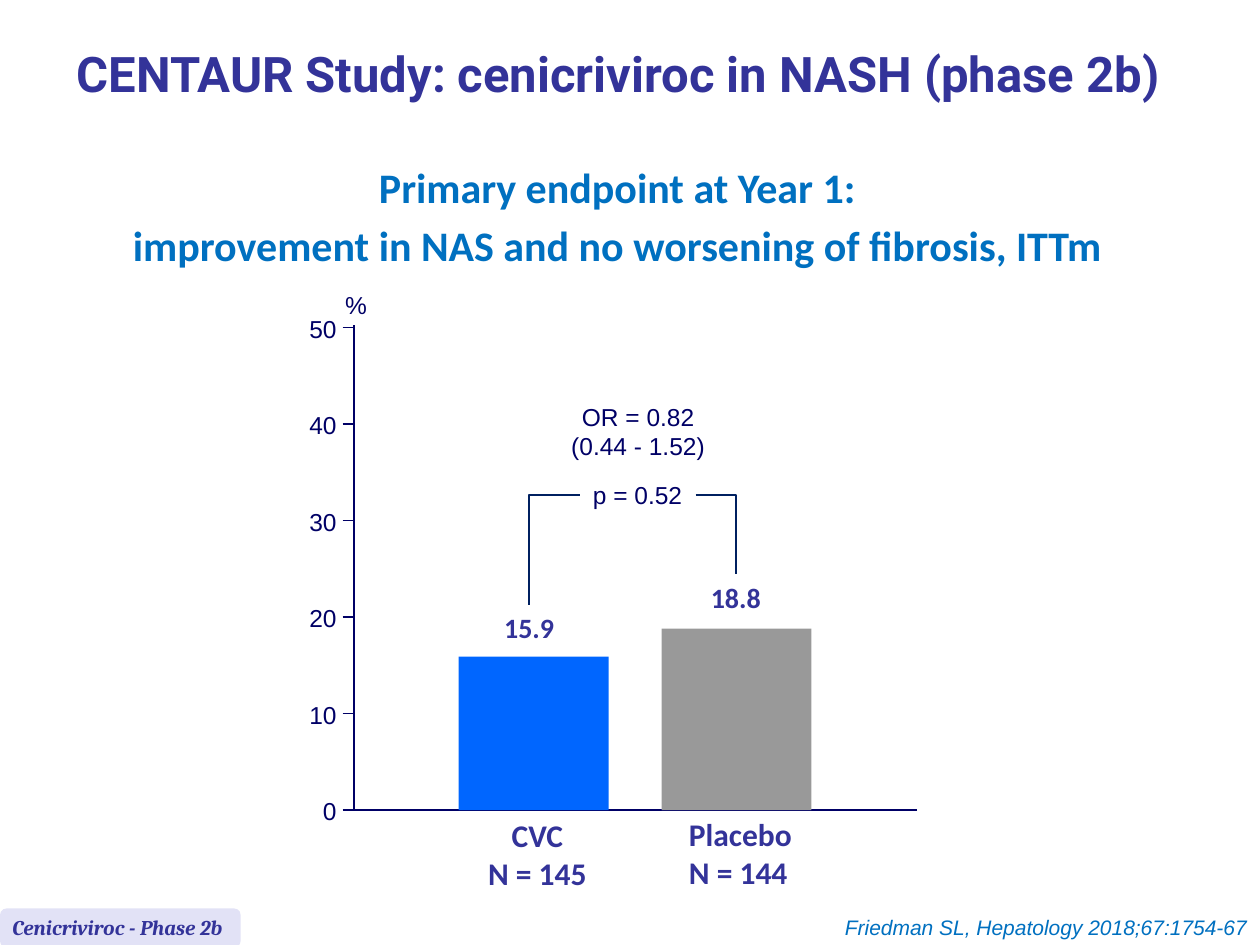
from lxml import etree
from pptx import Presentation
from pptx.dml.color import RGBColor
from pptx.enum import shapes, text
from pptx.oxml.ns import qn
from pptx.util import Inches, Pt

NAVY, INDIGO, BLUE = "000066", "333399", "0070C0"
LEFT, CENTER, RIGHT = text.PP_ALIGN.LEFT, text.PP_ALIGN.CENTER, text.PP_ALIGN.RIGHT


def rgb(value):
    return RGBColor.from_string(value)


def write(box, words, size, font, color, align=CENTER, bold=False, italic=False, wrap=False):
    frame = box.text_frame
    frame.text = words
    frame.word_wrap = wrap
    for paragraph in frame.paragraphs:
        paragraph.alignment = align
        for run in paragraph.runs:
            run.font.size, run.font.name = Pt(size), font
            run.font.bold, run.font.italic = bold, italic
            run.font.color.rgb = rgb(color)
    return box


prs = Presentation()
prs.slide_width, prs.slide_height = Inches(10), Inches(7.5)
slide = prs.slides.add_slide(prs.slide_layouts[5])
canvas = slide.shapes

title = canvas.title
title.left, title.top, title.width, title.height = Inches(0.51), Inches(0.08), Inches(9.13), Inches(1.07)
write(title, "CENTAUR Study: cenicriviroc in NASH (phase 2b)", 28, "Roboto", INDIGO, LEFT, bold=True, wrap=True)
title.text_frame.vertical_anchor = text.MSO_ANCHOR.MIDDLE
title.text_frame.paragraphs[0].line_spacing = 0.85

endpoint = canvas.add_textbox(Inches(0.9), Inches(1.23), Inches(8), Inches(0.99))
write(endpoint, "Primary endpoint at Year 1:\nimprovement in NAS and no worsening of fibrosis, ITTm",
      24, "Calibri", BLUE, bold=True)
endpoint.text_frame.paragraphs[1].space_before = Pt(4.8)

tab = canvas.add_shape(shapes.MSO_SHAPE.ROUNDED_RECTANGLE, 0, Inches(7.21), Inches(1.91), Inches(0.31))
tab.shadow.inherit = False
tab.fill.solid()
tab.fill.fore_color.rgb = rgb("E2E2F6")
tab.line.fill.background()
study = canvas.add_textbox(0, Inches(7.21), Inches(1.91), Inches(0.3))
write(study, "Cenicriviroc - Phase 2b", 12, "Cambria", INDIGO, LEFT, bold=True, italic=True, wrap=True)
citation = canvas.add_textbox(Inches(2.64), Inches(7.21), Inches(7.36), Inches(0.3))
write(citation, "Friedman SL, Hepatology 2018;67:1754-67", 12, "Arial", BLUE, RIGHT, italic=True, wrap=True)

axis_x, base_y, per_unit = 2.81, 6.43, 0.0766
outline = canvas.build_freeform(Inches(7.28), Inches(base_y))
outline.add_line_segments([(Inches(axis_x), Inches(base_y)), (Inches(axis_x), Inches(2.58))], close=False)
axes = outline.convert_to_shape()
axes.shadow.inherit = False
axes.fill.background()
axes.line.color.rgb = rgb(NAVY)
axes.line.width = Pt(0.88)

for value in range(0, 51, 10):
    y = base_y - value * per_unit
    tick = canvas.add_connector(shapes.MSO_CONNECTOR.STRAIGHT, Inches(2.72), Inches(y), Inches(axis_x), Inches(y))
    tick.line.color.rgb = rgb(NAVY)
    tick.line.width = Pt(0.88)
    etree.SubElement(tick._element.spPr, qn("a:effectLst"))
    width = 0.42 if value else 0.31
    scale = canvas.add_textbox(Inches(2.77 - width), Inches(y - 0.16), Inches(width), Inches(0.34))
    write(scale, str(value), 14, "Arial", NAVY, RIGHT)

unit = canvas.add_textbox(Inches(2.64), Inches(2.25), Inches(0.38), Inches(0.34))
write(unit, "%", 14, "Arial", NAVY, LEFT)
odds_ratio = canvas.add_textbox(Inches(4.43), Inches(3.14), Inches(1.27), Inches(0.57))
write(odds_ratio, "OR = 0.82\v(0.44 - 1.52)", 14, "Arial", NAVY)
p_value = canvas.add_textbox(Inches(4.6), Inches(3.76), Inches(0.92), Inches(0.34))
write(p_value, "p = 0.52", 14, "Arial", NAVY)

arms = [
    ("CVC\nN = 145", 15.9, "0066FF", 3.64, (3.9, 4.8), (3.77, 6.43, 0.99), CENTER, 1),
    ("Placebo\nN = 144", 18.8, "999999", 5.25, (5.54, 4.56), (5.37, 6.42, 1.03), LEFT, 3),
]
for name, percent, color, bar_x, (value_x, value_y), (name_x, name_y, name_w), align, p_side in arms:
    height = percent * per_unit
    bar = canvas.add_shape(shapes.MSO_SHAPE.RECTANGLE, Inches(bar_x), Inches(base_y - height),
                           Inches(1.19), Inches(height))
    bar.shadow.inherit = False
    bar.fill.solid()
    bar.fill.fore_color.rgb = rgb(color)
    bar.line.fill.background()

    result = canvas.add_textbox(Inches(value_x), Inches(value_y), Inches(0.6), Inches(0.37))
    write(result, str(percent), 16, "Calibri", INDIGO, bold=True)
    arm = canvas.add_textbox(Inches(name_x), Inches(name_y), Inches(name_w), Inches(0.71))
    write(arm, name, 18, "Calibri", INDIGO, align, bold=True)

    p_edge = 4.6 if p_side == 1 else 5.52
    bracket = canvas.add_connector(shapes.MSO_CONNECTOR.ELBOW, Inches(p_edge), Inches(3.93),
                                   Inches(value_x + 0.3), Inches(value_y))
    bracket.begin_connect(p_value, p_side)
    bracket.end_connect(result, 0)
    bracket.line.color.rgb = rgb("002060")
    bracket.line.width = Pt(0.75)
    bracket._element.spPr.find(qn("a:prstGeom")).set("prst", "bentConnector2")
    etree.SubElement(bracket._element.spPr, qn("a:effectLst"))

prs.save("out.pptx")
